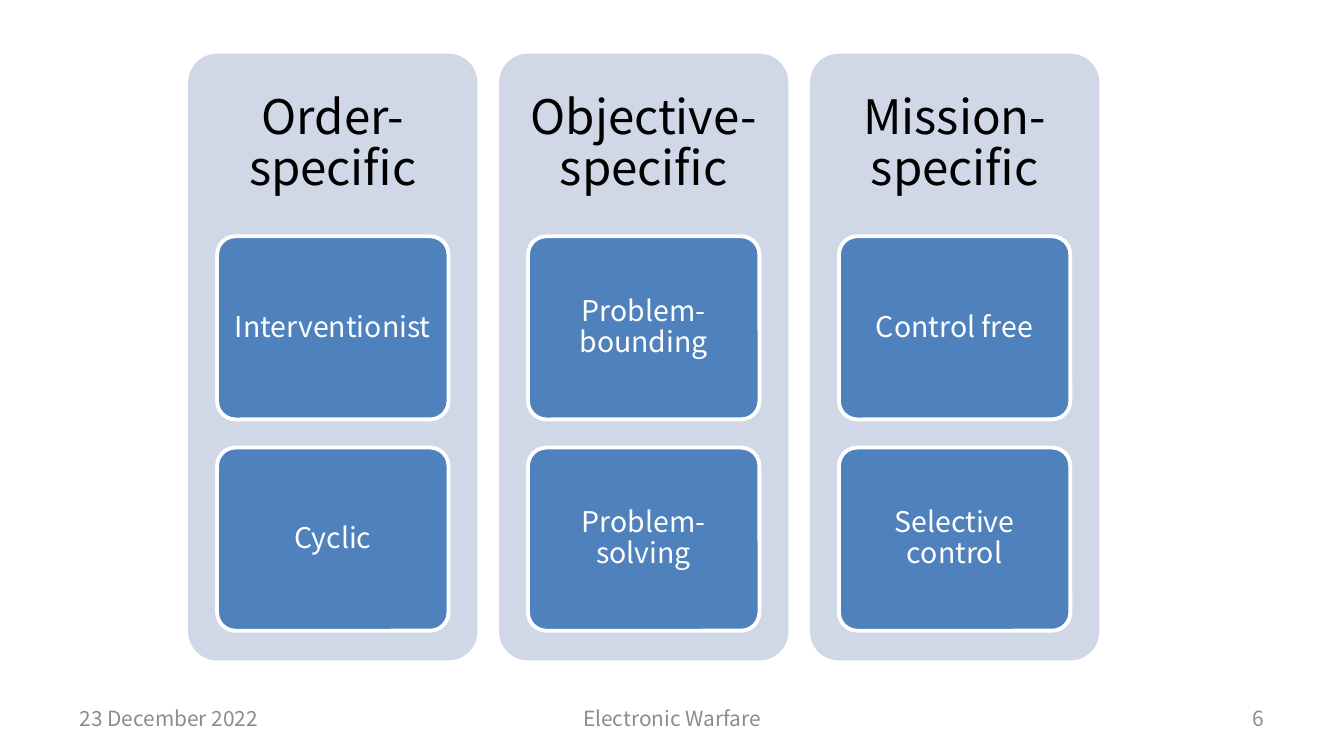
from pptx import Presentation
from pptx.dml.color import RGBColor
from pptx.enum.shapes import MSO_SHAPE
from pptx.enum.text import MSO_ANCHOR, PP_ALIGN
from pptx.util import Pt

ROUND = MSO_SHAPE.ROUNDED_RECTANGLE
MIDDLE = MSO_ANCHOR.MIDDLE
LEFT, CENTER, RIGHT = PP_ALIGN.LEFT, PP_ALIGN.CENTER, PP_ALIGN.RIGHT
FONT = "Noto Sans CJK SC"
PANEL, CARD, WHITE, BLACK, GREY = "D0D8E8", "4F81BD", "FFFFFF", "000000", "8C8C8C"

COLUMNS = [
    ("Order- specific", ["Interventionist", "Cyclic"]),
    ("Objective- specific", ["Problem-bounding", "Problem-solving"]),
    ("Mission-specific", ["Control free", "Selective control"]),
]
FOOTER = [
    ("23 December 2022", 35.4, 165.3, LEFT),
    ("Electronic Warfare", 242.2, 224.4, CENTER),
    ("6", 507.8, 165.3, RIGHT),
]


def color(code):
    return RGBColor.from_string(code)


def write(shape, text, size, code, align, pad, spacing=None):
    frame = shape.text_frame
    frame.word_wrap = True
    frame.vertical_anchor = MIDDLE
    frame.margin_left = frame.margin_right = Pt(pad[0])
    frame.margin_top = frame.margin_bottom = Pt(pad[1])
    frame.text = text
    para = frame.paragraphs[0]
    para.alignment = align
    para.line_spacing = spacing
    font = para.runs[0].font
    font.name, font.size = FONT, Pt(size)
    font.color.rgb = color(code)


def add_round(slide, x, y, w, h, fill, line=None):
    shape = slide.shapes.add_shape(ROUND, Pt(x), Pt(y), Pt(w), Pt(h))
    shape.adjustments[0] = 0.1
    shape.shadow.inherit = False
    shape.fill.solid()
    shape.fill.fore_color.rgb = color(fill)
    if line:
        shape.line.color.rgb = color(line)
        shape.line.width = Pt(2)
    else:
        shape.line.fill.background()
    return shape


def add_label(slide, x, y, w, h, *style):
    box = slide.shapes.add_textbox(Pt(x), Pt(y), Pt(w), Pt(h))
    write(box, *style)


def add_column(slide, x, y, w, h, head, items):
    # Panel with its heading in the top 30 percent
    add_round(slide, x, y, w, h, PANEL)
    add_label(slide, x, y, w, 0.3 * h, head, 25, BLACK, CENTER, (7.2, 7.2), 0.9)
    # Cards stacked below the heading
    card_h, gap = 96.5, 14.8
    for i, item in enumerate(items):
        top = y + 96.2 + i * (card_h + gap)
        card = add_round(slide, x + 0.1 * w, top, 0.8 * w, card_h, CARD, WHITE)
        write(card, item, 15, WHITE, CENTER, (2.9, 2.2), 0.9)


def add_columns(slide, x, y, w, h):
    gap = 11.4
    col_w = (w - gap * (len(COLUMNS) - 1)) / len(COLUMNS)
    for i, (head, items) in enumerate(COLUMNS):
        add_column(slide, x + i * (col_w + gap), y, col_w, h, head, items)


def add_footer(slide, y, h):
    for text, x, w, align in FOOTER:
        add_label(slide, x, y, w, h, text, 11, GREY, align, (6.5, 2.9))


def main():
    deck = Presentation()
    deck.slide_width, deck.slide_height = Pt(708.5), Pt(396.7)
    slide = deck.slides.add_slide(deck.slide_layouts[6])
    add_columns(slide, 99.2, 28.3, 480.3, 319.7)
    add_footer(slide, 367.9, 20.9)
    deck.save("out.pptx")


if __name__ == "__main__":
    main()
